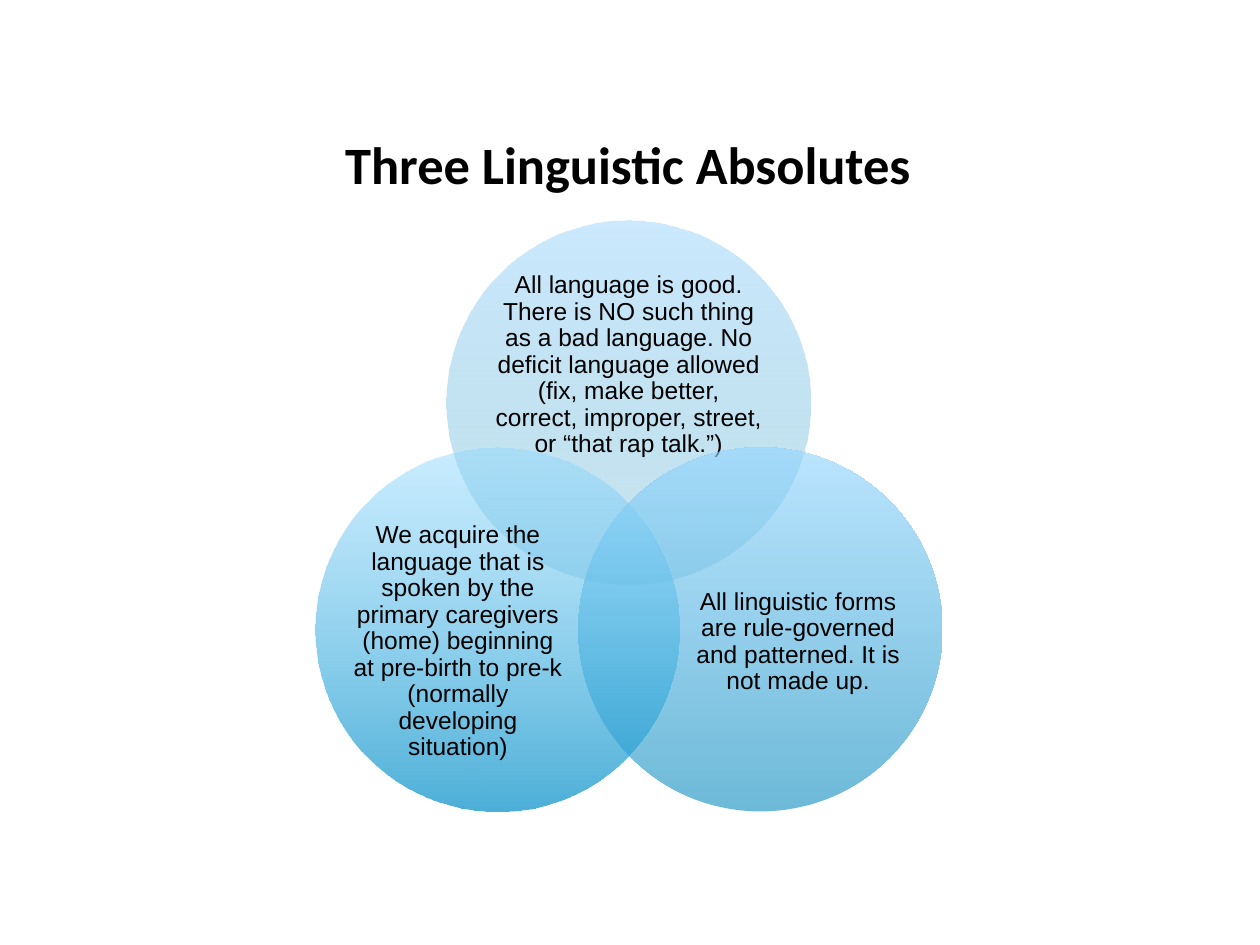
from pptx import Presentation
from pptx.dml.color import RGBColor as RGB
from pptx.enum.shapes import MSO_SHAPE as Shape
from pptx.enum.text import MSO_ANCHOR as Anchor, PP_ALIGN as Align
from pptx.oxml.ns import qn
from pptx.oxml.xmlchemy import OxmlElement as make
from pptx.util import Inches, Pt

BLACK = RGB(0x00, 0x00, 0x00)
TOP_LOW, TOP_HIGH = RGB(0x18, 0x8D, 0xBA), RGB(0x97, 0xD3, 0xFD)
RIGHT_LOW, RIGHT_HIGH = RGB(0x1B, 0x93, 0xC3), RGB(0x94, 0xD6, 0xFF)
LEFT_LOW, LEFT_HIGH = RGB(0x1D, 0x9A, 0xCD), RGB(0x90, 0xD9, 0xFF)
SIZE = 2.89

CIRCLES = [
    ((3.54, 1.75), [(TOP_LOW, 22), (TOP_HIGH, 49)], (3.93, 2.25, 2.12, 1.3),
     "All language is good. There is NO such thing as a bad language. "
     "No deficit language allowed (fix, make better, correct, improper, "
     "street, or “that rap talk.”)"),
    ((4.59, 3.55), [(RIGHT_LOW, 64), (RIGHT_HIGH, 64)], (5.47, 4.3, 1.73, 1.59),
     "All linguistic forms are rule-governed and patterned. "
     "It is not made up."),
    ((2.5, 3.55), [(LEFT_LOW, 79), (LEFT_HIGH, 48)], (2.77, 4.3, 1.73, 1.59),
     "We acquire the language that is spoken by the primary caregivers "
     "(home) beginning at pre-birth to pre-k (normally developing situation)"),
]


def add_circle(slide, spot, stops):
    """Draw a borderless circle with a see-through gradient rising from below."""
    x, y = spot
    shape = slide.shapes.add_shape(
        Shape.OVAL, Inches(x), Inches(y), Inches(SIZE), Inches(SIZE))
    shape.shadow.inherit = False
    shape.line.fill.background()
    fill = shape.fill
    fill.gradient()
    fill.gradient_angle = 90
    for stop, (color, _) in zip(fill.gradient_stops, stops):
        stop.color.rgb = color
    tints = list(shape._element.spPr.iter(qn("a:srgbClr")))
    for tint, (_, alpha) in zip(tints, stops):
        node = make("a:alpha")
        node.set("val", str(alpha * 1000))
        tint.append(node)


def add_text(slide, text, box, font="Arial", size=14, bold=False,
             pad=(0, 0), anchor=Anchor.MIDDLE, lead=0.9):
    """Place one centred paragraph in a wrapping text box."""
    frame = slide.shapes.add_textbox(*map(Inches, box)).text_frame
    frame.word_wrap = True
    frame.vertical_anchor = anchor
    frame.margin_left = frame.margin_right = Inches(pad[0])
    frame.margin_top = frame.margin_bottom = Inches(pad[1])
    para = frame.paragraphs[0]
    para.alignment = Align.CENTER
    para.line_spacing = lead
    run = para.add_run()
    run.text = text
    run.font.name = font
    run.font.size = Pt(size)
    run.font.bold = bold
    run.font.color.rgb = BLACK


def main():
    """Build the slide with three overlapping circles and save it."""
    deck = Presentation()
    deck.slide_width, deck.slide_height = Inches(10), Inches(7.5)
    slide = deck.slides.add_slide(deck.slide_layouts[6])
    for spot, stops, box, text in CIRCLES:
        add_circle(slide, spot, stops)
        add_text(slide, text, box)
    add_text(slide, "Three Linguistic Absolutes", (1.11, 1, 7.75, 0.61),
             font="Calibri", size=30, bold=True, pad=(0.1, 0.05),
             anchor=Anchor.TOP, lead=1.0)
    deck.save("out.pptx")


if __name__ == "__main__":
    main()
